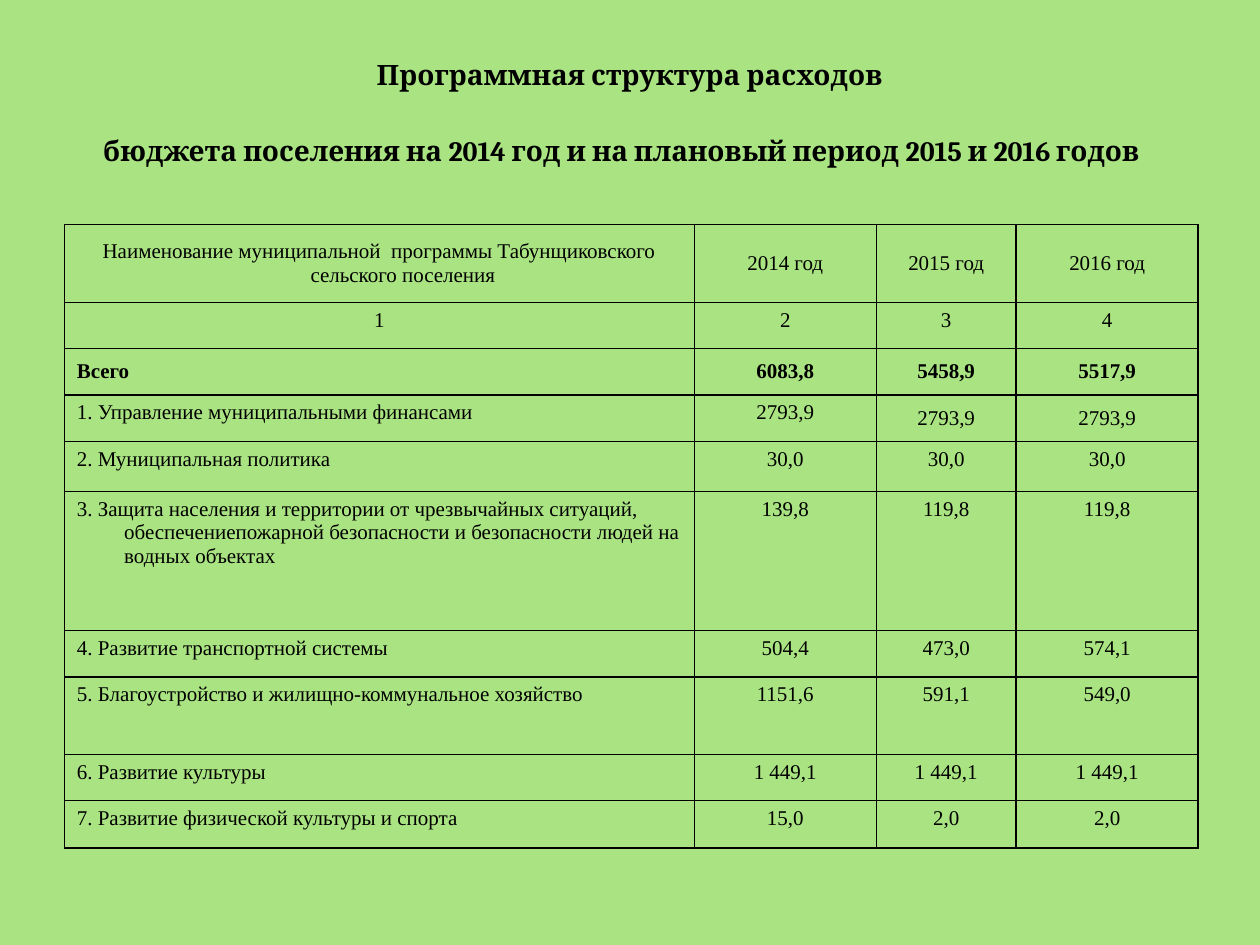
"""Build a slide with a budget table by municipal programme."""
from lxml import etree
from pptx import Presentation
from pptx import util as u
from pptx.dml import color
from pptx.enum import text
from pptx.oxml import ns

COLS = [360, 104, 80, 104]
HEIGHTS = [44.5, 26.5, 26.5, 26.5, 28.75, 79.5, 26.5, 44.25, 26.5, 27]
ROWS = [
    ["Наименование муниципальной  программы Табунщиковского сельского поселения",
     "2014 год", "2015 год", "2016 год"],
    ["1", "2", "3", "4"],
    ["Всего", "6083,8", "5458,9", "5517,9"],
    ["1. Управление муниципальными финансами", "2793,9", "2793,9", "2793,9"],
    ["2. Муниципальная политика", "30,0", "30,0", "30,0"],
    ["3. Защита населения и территории от чрезвычайных ситуаций, "
     "обеспечениепожарной безопасности и безопасности людей на водных объектах",
     "139,8", "119,8", "119,8"],
    ["4. Развитие транспортной системы", "504,4", "473,0", "574,1"],
    ["5. Благоустройство и жилищно-коммунальное хозяйство", "1151,6", "591,1", "549,0"],
    ["6. Развитие культуры", "1 449,1", "1 449,1", "1 449,1"],
    ["7. Развитие физической культуры и спорта", "15,0", "2,0", "2,0"],
]
TOTAL_ROW = 2
MIDDLE = {(r, c) for r in (0, TOTAL_ROW) for c in range(4)} | {(3, 2), (3, 3)}


def rgb(value):
    """Return a colour from a hex string."""
    return color.RGBColor.from_string(value)


def style_font(font, **formats):
    """Set the font attributes and make the text black."""
    for name, value in formats.items():
        setattr(font, name, value)
    font.color.rgb = rgb("000000")


def add_title(s):
    """Add the centred two-line title."""
    sp = s.shapes.add_textbox(u.Pt(36), u.Pt(21.6), u.Pt(648), u.Pt(90))
    tf = sp.text_frame
    tf.word_wrap = True
    tf.vertical_anchor = text.MSO_ANCHOR.MIDDLE
    p = tf.paragraphs[0]
    p.alignment = text.PP_ALIGN.CENTER
    p.text = ("Программная структура расходов\v"
              "бюджета поселения на 2014 год и на плановый период 2015 и 2016 годов")
    for r in p.runs:
        style_font(r.font, name="Cambria", size=u.Pt(16), bold=True)
    r = p.add_run()
    r.text = " "
    style_font(r.font, name="Calibri", size=u.Pt(40), bold=False)


def add_borders(cell):
    """Draw a thin black line on each side of a cell."""
    pr = cell._tc.get_or_add_tcPr()
    for i, side in enumerate(("lnL", "lnR", "lnT", "lnB")):
        ln = etree.Element(ns.qn(f"a:{side}"), w=str(u.Pt(1)))
        fill = etree.SubElement(ln, ns.qn("a:solidFill"))
        etree.SubElement(fill, ns.qn("a:srgbClr"), val="000000")
        pr.insert(i, ln)


def fill_cell(cell, value, centred, middle, bold):
    """Write a cell with a hanging indent and borders."""
    cell.fill.background()
    add_borders(cell)
    cell.vertical_anchor = text.MSO_ANCHOR.MIDDLE if middle else text.MSO_ANCHOR.TOP
    p = cell.text_frame.paragraphs[0]
    p.alignment = text.PP_ALIGN.CENTER if centred else text.PP_ALIGN.LEFT
    for name, length in {"marL": 27, "indent": -27}.items():
        p._p.get_or_add_pPr().set(name, str(u.Pt(length)))
    r = p.add_run()
    r.text = value
    style_font(r.font, name="Times New Roman", size=u.Pt(12), bold=bold)


def add_budget_table(s):
    """Add the table of programme spending by year."""
    tbl = s.shapes.add_table(len(ROWS), len(COLS), u.Pt(36.75), u.Pt(128.25),
                             u.Pt(sum(COLS)), u.Pt(sum(HEIGHTS))).table
    tbl.first_row = tbl.horz_banding = False
    for col, width in zip(tbl.columns, COLS):
        col.width = u.Pt(width)
    for i, (values, height) in enumerate(zip(ROWS, HEIGHTS)):
        tbl.rows[i].height = u.Pt(height)
        for j, value in enumerate(values):
            fill_cell(tbl.cell(i, j), value, centred=j > 0 or i < TOTAL_ROW,
                      middle=(i, j) in MIDDLE, bold=i == TOTAL_ROW)


def main():
    """Build and save the slide."""
    prs = Presentation()
    prs.slide_width, prs.slide_height = u.Pt(720), u.Pt(540)
    s = prs.slides.add_slide(prs.slide_layouts[6])
    s.background.fill.solid()
    s.background.fill.fore_color.rgb = rgb("AAE482")
    add_title(s)
    add_budget_table(s)
    prs.save("out.pptx")


if __name__ == "__main__":
    main()
